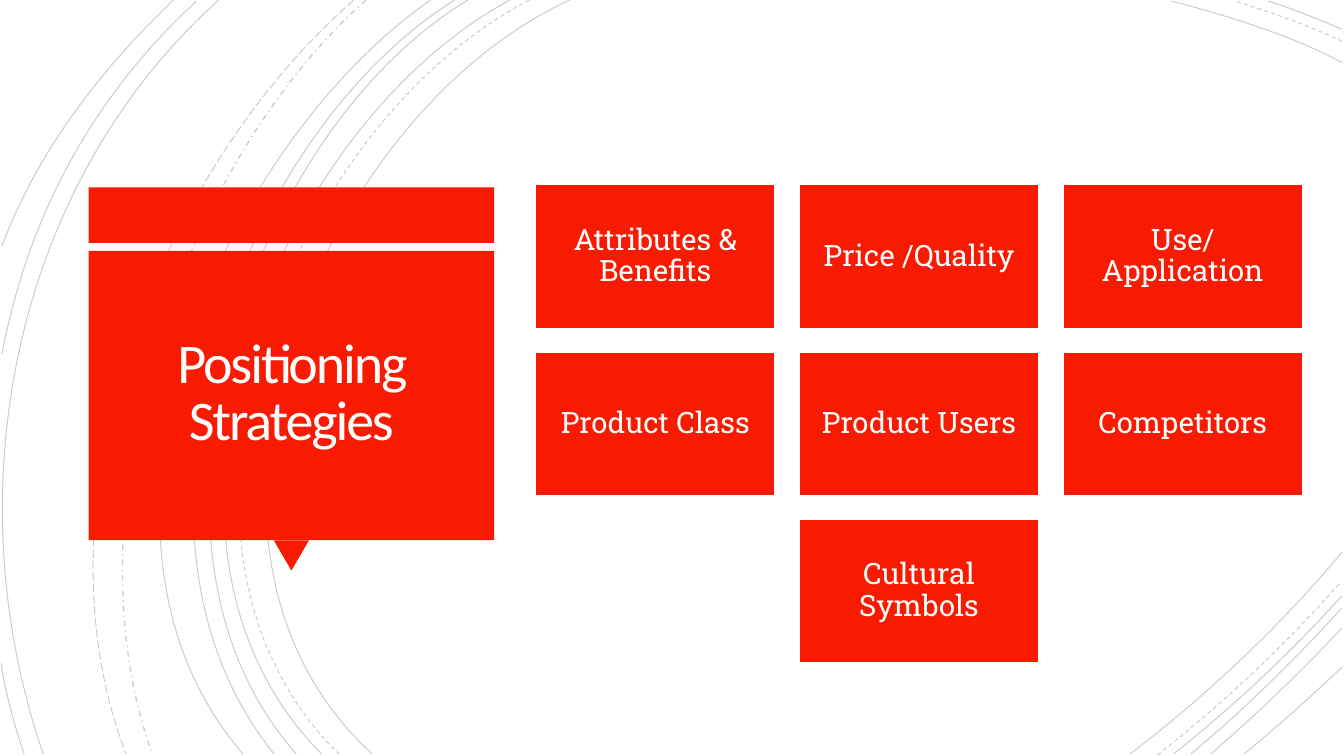
from dataclasses import dataclass
from lxml.etree import SubElement
from pptx import Presentation
from pptx.dml.color import RGBColor
from pptx.enum.dml import MSO_LINE
from pptx.enum.shapes import MSO_SHAPE
from pptx.enum.text import MSO_ANCHOR, PP_ALIGN
from pptx.oxml.ns import qn
from pptx.util import Emu, Pt

PX = 9144  # EMU per px, 100 px to the inch


@dataclass(frozen=True)
class Theme:
    red: RGBColor = RGBColor(0xF8, 0x1B, 0x02)
    white: RGBColor = RGBColor(0xFF, 0xFF, 0xFF)
    title: RGBColor = RGBColor(0xFF, 0xFE, 0xFF)
    ink: RGBColor = RGBColor(0, 0, 0)
    head: str = "Calibri"
    body: str = "Roboto Slab"
    big: int = 40
    small: int = 21
    thin: float = 0.75
    edge: float = 1.25


THEME = Theme()

# Start, two control points and end of each arc
SOLID = [
    (565, 0, 315, 115, 143, 540, 369, 748),
    (1331, 62, 1278, 34, 1218, 16, 1162, 1),
    (1121, 748, 1197, 690, 1269, 622, 1331, 548),
    (506, 0, 270, 127, 110, 537, 319, 748),
    (1331, 29, 1307, 19, 1283, 9, 1258, 1),
    (1164, 748, 1223, 701, 1280, 648, 1331, 591),
    (464, 0, 244, 133, 110, 541, 294, 748),
    (1181, 748, 1234, 704, 1284, 655, 1331, 603),
    (451, 0, 231, 138, 97, 533, 272, 748),
    (1201, 748, 1246, 709, 1290, 667, 1331, 623),
    (427, 0, 217, 147, 53, 529, 241, 748),
    (1234, 748, 1267, 721, 1299, 692, 1331, 662),
    (217, 0, 11, 185, -46, 490, 43, 748),
    (195, 1, 92, 96, 28, 214, 2, 351),
    (1, 658, 6, 689, 14, 719, 24, 748),
    (172, 0, 100, 69, 37, 150, 2, 244),
]
DASHED = [
    (525, 0, 285, 125, 123, 537, 336, 748),
    (1331, 41, 1297, 25, 1260, 12, 1225, 1),
    (1148, 749, 1213, 698, 1275, 640, 1330, 577),
]
DOTTED = [(363, 0, 176, 166, 65, 509, 151, 748)]
LONG = [(351, 0, 157, 169, 29, 499, 125, 748)]
ARCS = [
    (SOLID, MSO_LINE.SOLID, THEME.thin),
    (DASHED, MSO_LINE.DASH, THEME.thin),
    (DOTTED, MSO_LINE.DASH_DOT, 1),
    (LONG, MSO_LINE.LONG_DASH, THEME.thin),
]

ROWS = [
    ["Attributes & Benefits", "Price /Quality", "Use/Application"],
    ["Product Class", "Product Users", "Competitors"],
    ["Cultural Symbols"],
]


def px(*sizes):
    return [Emu(int(size * PX)) for size in sizes]


def bend(curve):
    """Turn the three line segments of an outline into one Bezier curve."""
    outline = curve._element.find(".//" + qn("a:path"))
    bezier = SubElement(outline, qn("a:cubicBezTo"))
    for side in outline.findall(qn("a:lnTo")):
        bezier.append(side[0])
        outline.remove(side)


def add_arc(slide, arc, dash, width):
    start, *rest = zip(arc[::2], arc[1::2])
    pen = slide.shapes.build_freeform(*start, scale=PX)
    pen.add_line_segments(rest, close=False)
    curve = pen.convert_to_shape()
    bend(curve)
    curve.shadow.inherit = False
    curve.fill.background()
    line = curve.line
    line.color.rgb = THEME.ink
    line.width = Pt(width)
    line.dash_style = dash
    color = curve._element.find(".//" + qn("a:ln")).find(
        ".//" + qn("a:srgbClr"))
    SubElement(color, qn("a:alpha"), val="20000")


def add_block(slide, kind, box):
    block = slide.shapes.add_shape(kind, *px(*box))
    block.shadow.inherit = False
    block.fill.solid()
    block.fill.fore_color.rgb = THEME.red
    block.line.fill.background()
    return block


def set_text(shape, text, font, size, color, inset, space):
    """Fill a shape with one centred paragraph and return its run."""
    frame = shape.text_frame
    frame.text = text
    frame.word_wrap = True
    frame.vertical_anchor = MSO_ANCHOR.MIDDLE
    frame.margin_left, frame.margin_right = px(inset, inset)
    frame.margin_top, frame.margin_bottom = px(inset, inset)
    para = frame.paragraphs[0]
    para.alignment = PP_ALIGN.CENTER
    para.line_spacing = space
    run = para.runs[0]
    run.font.name = font
    run.font.size = Pt(size)
    run.font.color.rgb = color
    return run


def draw_arcs(slide):
    for arcs, dash, width in ARCS:
        for arc in arcs:
            add_arc(slide, arc, dash, width)


def draw_title(slide, left, top, width, height):
    """Draw a strip over a panel whose pointer ends at the box's bottom."""
    strip, gap, tip, base, pad = 55, 8, 30, 35, 9
    panel = top + strip + gap
    depth = height - strip - gap - tip
    add_block(slide, MSO_SHAPE.RECTANGLE, (left, top, width, strip))
    mark = add_block(slide, MSO_SHAPE.ISOSCELES_TRIANGLE,
                     (left + (width - base) / 2, panel + depth, base, tip))
    mark.rotation = 180
    add_block(slide, MSO_SHAPE.RECTANGLE, (left, panel, width, depth))
    label = slide.shapes.add_textbox(*px(
        left + pad, panel + pad - 1, width - 2 * pad, depth - 2 * pad))
    run = set_text(label, "Positioning Strategies", THEME.head, THEME.big,
                   THEME.title, 25, 0.85)
    run._r.get_or_add_rPr().set("spc", "-150")


def draw_grid(slide, left, top, width, height):
    """Spread the cards over the box, centring a short row."""
    wide, high = 238, 143
    most = max(len(row) for row in ROWS)
    across = (width - wide) / (most - 1)
    down = (height - high) / (len(ROWS) - 1)
    for r, row in enumerate(ROWS):
        shift = (most - len(row)) / 2
        for c, text in enumerate(row):
            card = add_block(slide, MSO_SHAPE.RECTANGLE, (
                left + (c + shift) * across, top + r * down, wide, high))
            card.line.color.rgb = THEME.white
            card.line.width = Pt(THEME.edge)
            set_text(card, text, THEME.body, THEME.small, THEME.white, 9, 0.9)


def main():
    deck = Presentation()
    deck.slide_width, deck.slide_height = px(1333, 750)
    slide = deck.slides.add_slide(deck.slide_layouts[6])
    draw_arcs(slide)
    draw_title(slide, 88, 186, 402, 380)
    draw_grid(slide, 531, 183, 761, 475)
    deck.save("out.pptx")


if __name__ == "__main__":
    main()
